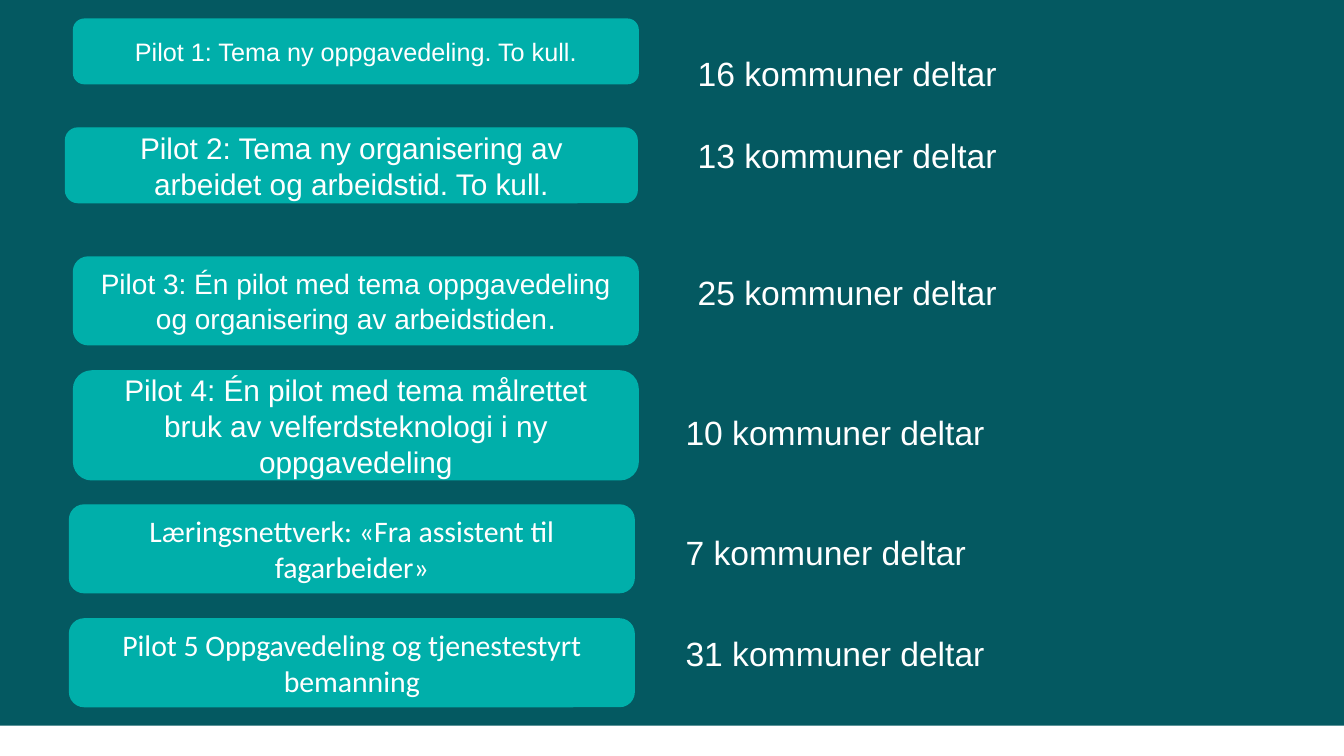
from dataclasses import dataclass

from pptx import Presentation
from pptx.dml.color import RGBColor
from pptx.enum.shapes import MSO_SHAPE as Preset
from pptx.enum.text import MSO_ANCHOR as Anchor, PP_ALIGN as Align
from pptx.util import Inches, Pt


@dataclass(frozen=True)
class Theme:
    """Colours, fonts and type sizes of the slide."""
    background: RGBColor = RGBColor(0x04, 0x59, 0x61)
    card: RGBColor = RGBColor(0x00, 0xAF, 0xAA)
    white: RGBColor = RGBColor(0xFF, 0xFF, 0xFF)
    font: str = "Arial"
    alternate_font: str = "Calibri"
    small: float = 18
    medium: float = 20
    large: float = 21.3
    count: float = 24


@dataclass(frozen=True)
class Pilot:
    """One row: the card, and the number of municipalities beside it."""
    card_box: tuple
    text: str
    count_box: tuple
    count: int
    size: float = Theme.large
    font: str = Theme.font
    ending: str = ""


THEME = Theme()
PILOTS = [
    Pilot((0.73, 0.19, 5.6, 0.64), "Pilot 1: Tema ny oppgavedeling. To kull.",
          (6.79, 0.46, 4.63, 0.96), 16, size=THEME.small),
    Pilot((0.65, 1.27, 5.67, 0.74),
          "Pilot 2: Tema ny organisering av arbeidet og arbeidstid. To kull.",
          (6.79, 1.27, 6.11, 1.08), 13),
    Pilot((0.73, 2.55, 5.6, 0.87),
          "Pilot 3: Én pilot med tema oppgavedeling og organisering av arbeidstiden",
          (6.79, 2.63, 4.63, 1.62), 25, size=THEME.medium, ending="."),
    Pilot((0.73, 3.68, 5.6, 1.08),
          "Pilot 4: Én pilot med tema målrettet bruk av velferdsteknologi i ny oppgavedeling",
          (6.67, 4.02, 4.63, 0.54), 10),
    Pilot((0.69, 5.01, 5.6, 0.87), "Læringsnettverk: «Fra assistent til fagarbeider»",
          (6.67, 5.21, 4.63, 0.54), 7, font=THEME.alternate_font),
    Pilot((0.69, 6.14, 5.6, 0.87), "Pilot 5 Oppgavedeling og tjenestestyrt bemanning",
          (6.67, 6.21, 4.63, 0.54), 31, font=THEME.alternate_font),
]


def add_panel(page, preset, box, colour):
    """Add a filled shape without shadow and return it."""
    panel = page.shapes.add_shape(preset, *map(Inches, box))
    panel.shadow.inherit = False
    panel.fill.solid()
    panel.fill.fore_color.rgb = colour
    panel.line.fill.background()
    return panel


def write_text(shape, text, font, size, align, anchor):
    """Write one white paragraph into a shape and return it."""
    frame = shape.text_frame
    frame.word_wrap = True
    frame.vertical_anchor = anchor
    frame.margin_left = frame.margin_right = Inches(0.13)
    frame.margin_top = frame.margin_bottom = Inches(0.07)
    para = frame.paragraphs[0]
    para.alignment = align
    para.font.name = font
    para.font.size = Pt(size)
    para.font.color.rgb = THEME.white
    para.add_run().text = text
    return para


def add_card(page, box, pilot):
    """Add the rounded card that names a pilot."""
    card = add_panel(page, Preset.ROUNDED_RECTANGLE, box, THEME.card)
    card.line.color.rgb = THEME.card
    card.line.width = Pt(1)
    para = write_text(card, pilot.text, pilot.font, pilot.size,
                      Align.CENTER, Anchor.MIDDLE)
    if pilot.ending:
        span = para.add_run()
        span.text = pilot.ending
        span.font.size = Pt(THEME.large)


def add_count(page, box, count):
    """Add the text that tells how many municipalities take part."""
    label = page.shapes.add_textbox(*map(Inches, box))
    write_text(label, f"{count} kommuner deltar", THEME.font, THEME.count,
               Align.LEFT, Anchor.TOP)


def add_pilot_slide(deck):
    """Add the slide with all pilots and their participants."""
    page = deck.slides.add_slide(deck.slide_layouts[6])
    page.background.fill.solid()
    page.background.fill.fore_color.rgb = THEME.background
    add_panel(page, Preset.RECTANGLE, (0, 7.2, 13.33, 0.3), THEME.white)
    for pilot in PILOTS:
        add_card(page, pilot.card_box, pilot)
        add_count(page, pilot.count_box, pilot.count)


def main():
    """Build and save the deck."""
    deck = Presentation()
    deck.slide_width = Inches(13.33)
    deck.slide_height = Inches(7.5)
    add_pilot_slide(deck)
    deck.save("out.pptx")


if __name__ == "__main__":
    main()
